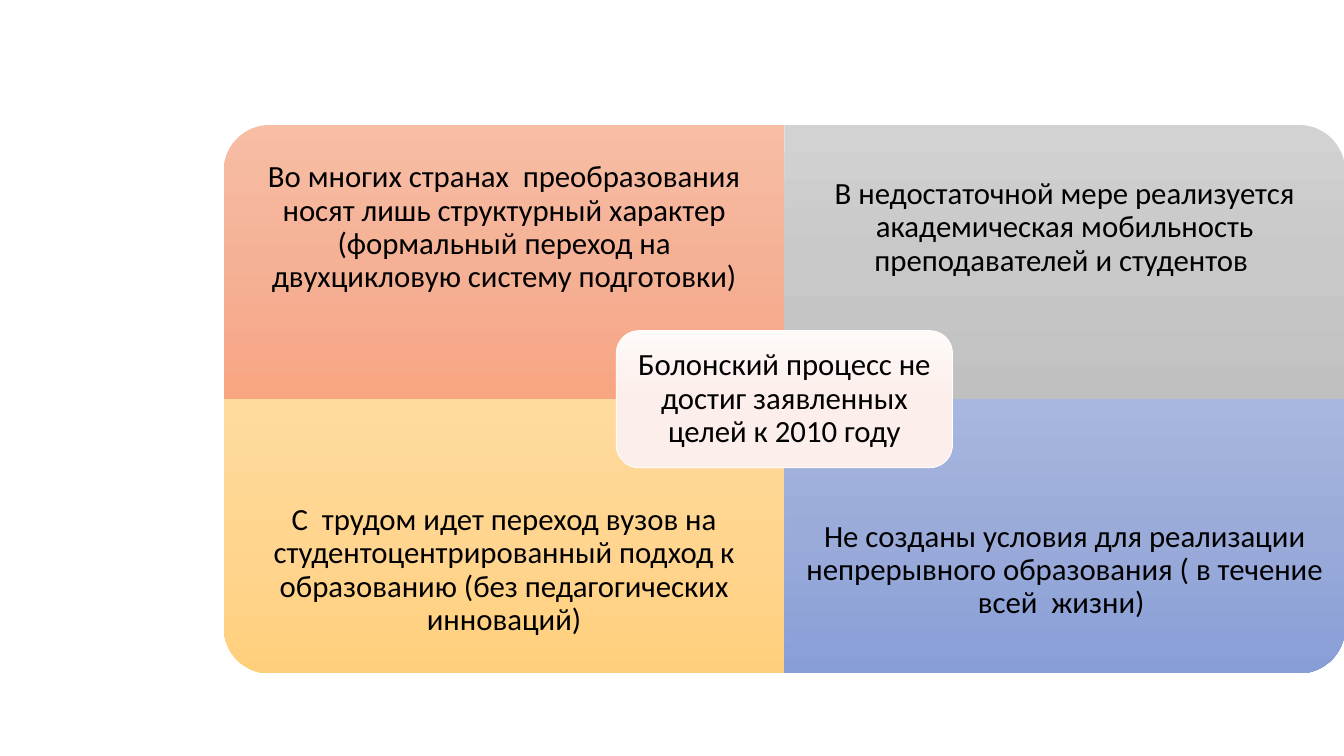
import pptx
import pptx.util
import pptx.dml.color
import pptx.enum.shapes
import pptx.enum.text
import pptx.oxml
import pptx.oxml.ns
from pptx.util import Inches

HUES = {
    "coral": ("F7BDA5", "F5B196", "F8A582"),
    "gray": ("D2D2D2", "C8C8C8", "C0C0C0"),
    "gold": ("FFDB9E", "FFD590", "FFD07C"),
    "blue": ("A8B7DF", "9AABD9", "889ED7"),
    "pale": ("FEFAF8", "FCEEEA", "FDECE7"),
}
INK = {"text": "000000", "edge": "FFFFFF"}

PARTS = [
    ("coral", 270, "Во многих странах  преобразования носят лишь структурный характер (формальный переход на двухцикловую систему подготовки)"),
    ("gray", 0, "В недостаточной мере реализуется академическая мобильность преподавателей и студентов "),
    ("gold", 180, "С  трудом идет переход вузов на студентоцентрированный подход к образованию (без педагогических инноваций)"),
    ("blue", 90, "Не созданы условия для реализации непрерывного образования ( в течение всей  жизни) "),
]
CORE = "Болонский процесс не достиг заявленных целей к 2010 году"


def color(name):
    """Return the named ink as an RGB colour."""
    return pptx.dml.color.RGBColor.from_string(INK[name])


def shade(shape, hue):
    """Fill a shape with a top-to-bottom gradient that ignores rotation."""
    stops = "".join(
        f'<a:gs pos="{i * 50000}"><a:srgbClr val="{tint}"/></a:gs>'
        for i, tint in enumerate(HUES[hue])
    )
    grad = pptx.oxml.parse_xml(
        f'<a:gradFill {pptx.oxml.ns.nsdecls("a")} rotWithShape="0">'
        f'<a:gsLst>{stops}</a:gsLst><a:lin ang="5400000" scaled="0"/></a:gradFill>'
    )
    shape.shadow.inherit = False
    shape.fill.background()
    props = shape._element.spPr
    props.replace(props.find(pptx.oxml.ns.qn("a:noFill")), grad)


def write(shape, text, inset):
    """Put centred text into a shape with equal insets."""
    frame = shape.text_frame
    frame.word_wrap = True
    frame.vertical_anchor = pptx.enum.text.MSO_ANCHOR.MIDDLE
    frame.margin_left = frame.margin_right = Inches(inset)
    frame.margin_top = frame.margin_bottom = Inches(inset)
    para = frame.paragraphs[0]
    para.alignment = pptx.enum.text.PP_ALIGN.CENTER
    para.line_spacing = 0.9
    run = para.add_run()
    run.text = text
    run.font.name = "Calibri"
    run.font.size = pptx.util.Pt(22)
    run.font.color.rgb = color("text")


def panel(slide, box, part, low):
    """Draw one quarter with its rounded outer corner and its text."""
    left, top, wide, high = box
    hue, turn, text = part
    w, h = (high, wide) if turn % 180 else (wide, high)
    tile = slide.shapes.add_shape(
        pptx.enum.shapes.MSO_SHAPE.ROUND_1_RECTANGLE,
        left + (wide - w) // 2, top + (high - h) // 2, w, h,
    )
    tile.rotation = turn
    tile.line.fill.background()
    shade(tile, hue)
    tall = int(high * 0.75)
    drop = high - tall if low else 0
    write(slide.shapes.add_textbox(left, top + drop, wide, tall), text, 0.17)


def center(slide, box):
    """Draw the middle label over the four quarters."""
    label = slide.shapes.add_shape(
        pptx.enum.shapes.MSO_SHAPE.ROUNDED_RECTANGLE, *box
    )
    shade(label, "pale")
    label.line.color.rgb = color("edge")
    label.line.width = pptx.util.Pt(0.5)
    write(label, CORE, 0.09)


def matrix(slide, box):
    """Lay out the quarters and the middle label in a box."""
    left, top, wide, high = box
    w, h = wide // 2, high // 2
    for i, part in enumerate(PARTS):
        row, col = divmod(i, 2)
        panel(slide, (left + col * w, top + row * h, w, h), part, row == 1)
    cw, ch = int(w * 0.6), h // 2
    center(slide, (left + w - cw // 2, top + h - ch // 2, cw, ch))


def main():
    """Build and save the slide."""
    deck = pptx.Presentation()
    deck.slide_width, deck.slide_height = Inches(13.33), Inches(7.5)
    slide = deck.slides.add_slide(deck.slide_layouts[6])
    matrix(slide, (Inches(2.22), Inches(1.24), Inches(11.12), Inches(5.44)))
    deck.save("out.pptx")


if __name__ == "__main__":
    main()
